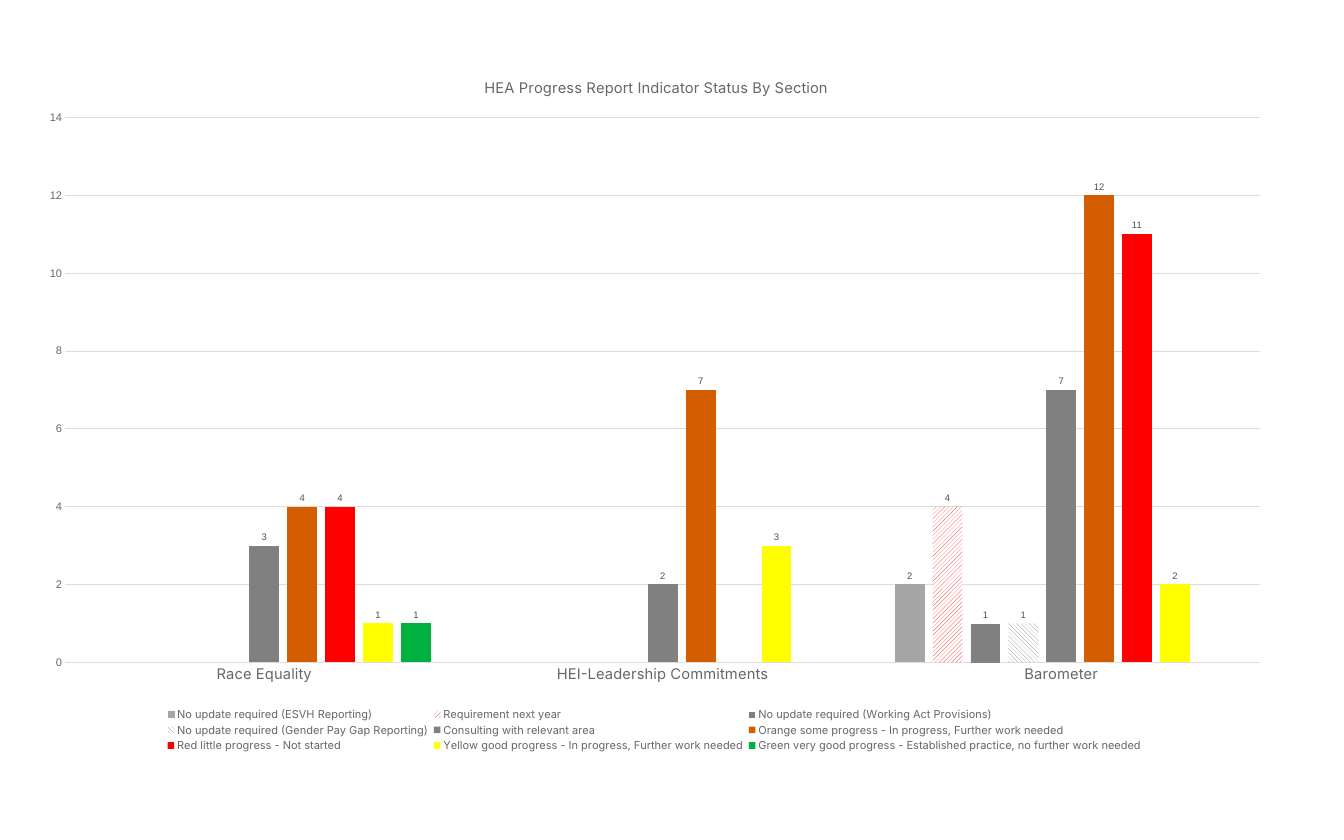
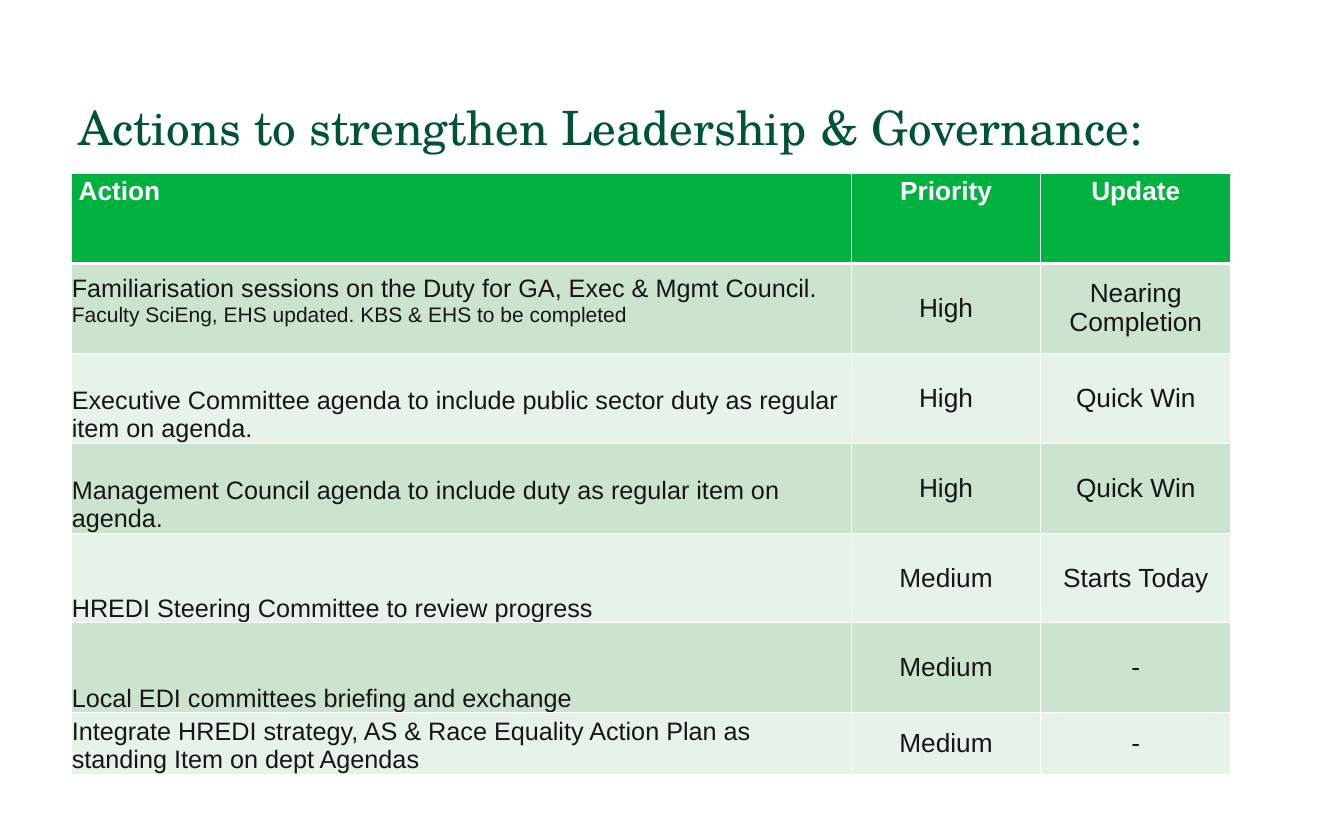
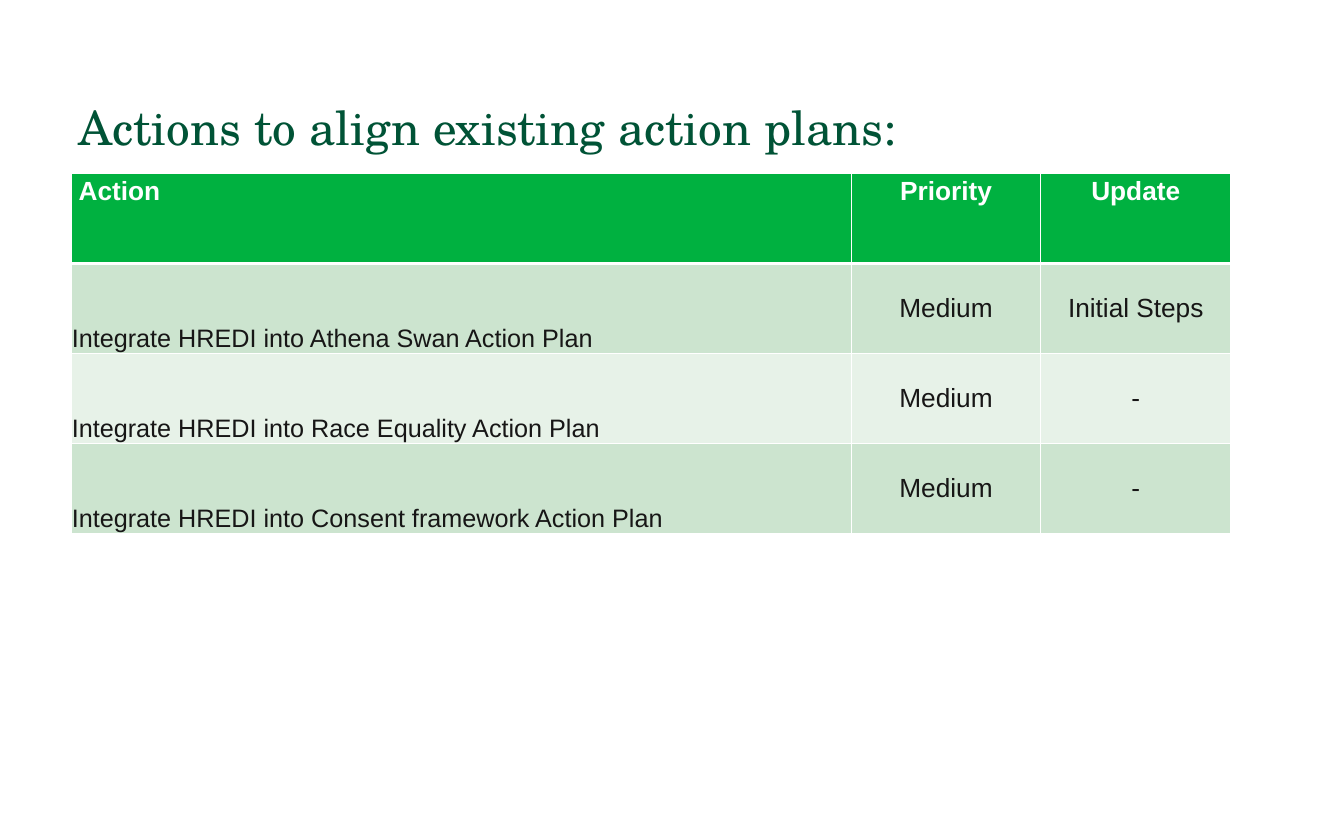
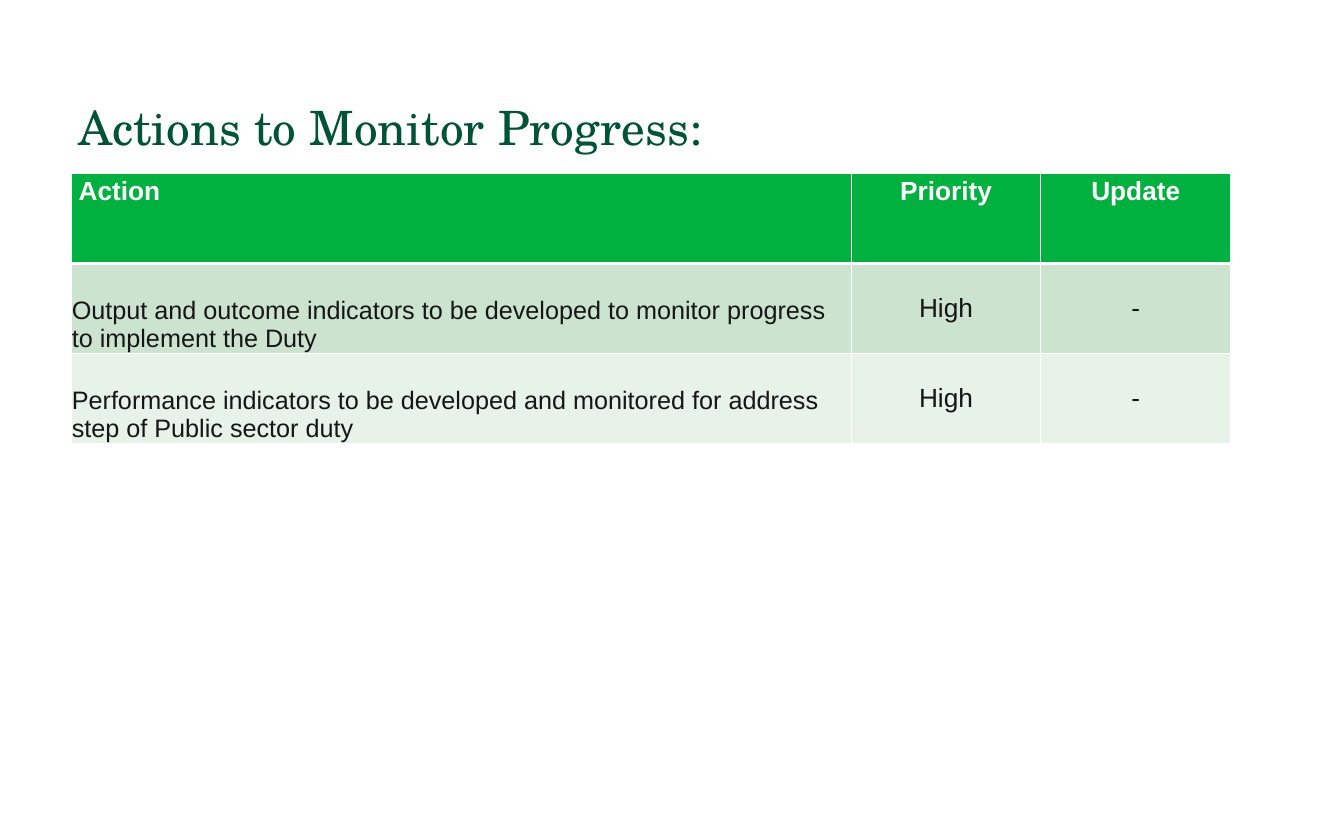
from lxml.etree import SubElement
from pptx import Presentation
from pptx.chart.data import CategoryChartData
from pptx.dml.color import RGBColor
from pptx.enum.chart import XL_CHART_TYPE, XL_LABEL_POSITION, XL_LEGEND_POSITION, XL_TICK_MARK
from pptx.enum.dml import MSO_PATTERN
from pptx.enum.text import MSO_ANCHOR, PP_ALIGN
from pptx.oxml import parse_xml
from pptx.oxml.ns import nsdecls, qn
from pptx.util import Inches, Pt

WIDTH, HEIGHT = 17.78, 11.11
LEFT = 0.94
COLUMNS = (10.32, 2.51, 2.51)
ROW, SHORT_ROW = 1.19, 0.75
TABLE_TOP = 2.29
SERIF, SANS, CHART_SANS = "TeX Gyre Schola", "Arial", "Inter"

COLORS = {
    "title": "005336", "header": "00B140", "band_dark": "CCE4CF", "band_light": "E7F2E8",
    "text": "171616", "white": "FFFFFF", "axis_text": "6A6666", "label": "524F4F",
    "grid": "DDDBDB", "silver": "A6A6A6", "gray": "808080", "orange": "D45D00",
    "red": "FF0000", "yellow": "FFFF00", "green": "00B140",
}

SECTIONS = ("Race Equality", "HEI-Leadership Commitments", "Barometer")
# name, values, colour, pattern
STATUSES = (
    ("No update required (ESVH Reporting)", (None, None, 2), "silver", MSO_PATTERN.DARK_VERTICAL),
    ("Requirement next year", (None, None, 4), "red", MSO_PATTERN.WIDE_UPWARD_DIAGONAL),
    ("No update required (Working Act Provisions)", (None, None, 1), "gray",
     MSO_PATTERN.DARK_HORIZONTAL),
    ("No update required (Gender Pay Gap Reporting)", (None, None, 1), "gray",
     MSO_PATTERN.WIDE_DOWNWARD_DIAGONAL),
    ("Consulting with relevant area", (3, 2, 7), "gray", None),
    ("Orange some progress - In progress, Further work needed", (4, 7, 12), "orange", None),
    ("Red little progress - Not started", (4, None, 11), "red", None),
    ("Yellow good progress - In progress, Further work needed", (1, 3, 2), "yellow", None),
    ("Green very good progress - Established practice, no further work needed",
     (1, None, None), "green", None),
)

HEADINGS = ("Action", "Priority", "Update")
# title, then rows of (action, priority, update, optional detail)
ACTION_PLANS = (
    ("Actions to strengthen Leadership & Governance:", (
        ("Familiarisation sessions on the Duty for GA, Exec & Mgmt Council.", "High",
         "Nearing Completion", "Faculty SciEng, EHS updated. KBS & EHS to be completed"),
        ("Executive Committee agenda to include public sector duty as regular item on agenda.",
         "High", "Quick Win"),
        ("Management Council agenda to include duty as regular item on agenda.",
         "High", "Quick Win"),
        ("HREDI Steering Committee to review progress", "Medium", "Starts Today"),
        ("Local EDI committees briefing and exchange", "Medium", "-"),
        ("Integrate HREDI strategy, AS & Race Equality Action Plan as standing Item on dept "
         "Agendas", "Medium", "-"),
    )),
    ("Actions to align existing action plans:", (
        ("Integrate HREDI into Athena Swan Action Plan", "Medium", "Initial Steps"),
        ("Integrate HREDI into Race Equality Action Plan", "Medium", "-"),
        ("Integrate HREDI into Consent framework Action Plan", "Medium", "-"),
    )),
    ("Actions to Monitor Progress:", (
        ("Output and outcome indicators to be developed to monitor progress to implement the "
         "Duty", "High", "-"),
        ("Performance indicators to be developed and monitored for address step of Public "
         "sector duty", "High", "-"),
    )),
)


def rgb(color):
    return RGBColor.from_string(COLORS[color])


def style_font(font, size, color, name=SANS, bold=False):
    font.size, font.name, font.bold = Pt(size), name, bold
    font.color.rgb = rgb(color)


def add_run(paragraph, text, size, color, name=SANS, bold=False):
    run = paragraph.add_run()
    run.text = text
    style_font(run.font, size, color, name, bold)


def add_title(slide, text):
    box = slide.shapes.add_textbox(Inches(LEFT), Inches(1.34), Inches(15.33), Inches(1.14))
    box.text_frame.word_wrap = True
    paragraph = box.text_frame.paragraphs[0]
    paragraph.line_spacing = 0.9
    add_run(paragraph, text, 45, "title", SERIF)


def set_borders(cell, bottom_width):
    properties = cell._tc.get_or_add_tcPr()
    for index, (side, width) in enumerate((("L", 1), ("R", 1), ("T", 1), ("B", bottom_width))):
        properties.insert(index, parse_xml(
            f'<a:ln{side} {nsdecls("a")} w="{Pt(width)}"><a:solidFill>'
            f'<a:srgbClr val="{COLORS["white"]}"/></a:solidFill></a:ln{side}>'))


def fill_cell(cell, color, bottom_border=1):
    cell.fill.solid()
    cell.fill.fore_color.rgb = rgb(color)
    set_borders(cell, bottom_border)


def write_header(cell, text, centred):
    paragraph = cell.text_frame.paragraphs[0]
    if centred:
        paragraph.alignment = PP_ALIGN.CENTER
    add_run(paragraph, text, 25, "white", bold=True)
    fill_cell(cell, "header", bottom_border=3)


def write_action(cell, action, detail, band):
    cell.vertical_anchor = MSO_ANCHOR.BOTTOM
    cell.margin_left = cell.margin_right = cell.margin_top = Inches(0.01)
    cell.margin_bottom = Inches(0.35 if detail else 0)
    add_run(cell.text_frame.paragraphs[0], action, 24, "text")
    for line in detail:
        add_run(cell.text_frame.add_paragraph(), line, 20, "text")
    fill_cell(cell, band)


def write_status(cell, status, band):
    cell.vertical_anchor = MSO_ANCHOR.MIDDLE
    paragraph = cell.text_frame.paragraphs[0]
    paragraph.alignment = PP_ALIGN.CENTER
    add_run(paragraph, status, 25, "text")
    fill_cell(cell, band)


def add_action_table(slide, actions):
    count = len(actions) + 1
    table = slide.shapes.add_table(count, len(COLUMNS), Inches(LEFT), Inches(TABLE_TOP),
                                   Inches(sum(COLUMNS)), Inches(ROW * count)).table
    table.horz_banding = False
    for column, width in zip(table.columns, COLUMNS):
        column.width = Inches(width)
    for index, row in enumerate(table.rows):
        row.height = Inches(SHORT_ROW if index == 6 else ROW)
    for index, heading in enumerate(HEADINGS):
        write_header(table.cell(0, index), heading, centred=index > 0)
    for index, (action, priority, update, *detail) in enumerate(actions, start=1):
        band = "band_dark" if index % 2 else "band_light"
        write_action(table.cell(index, 0), action, detail, band)
        write_status(table.cell(index, 1), priority, band)
        write_status(table.cell(index, 2), update, band)


def place_part(element, index, x, y, w=None, h=None, inner=False):
    """Fix a chart part's place, in shares of the chart's size."""
    for old in element.findall(qn("c:layout")):
        element.remove(old)
    layout = parse_xml(f'<c:layout {nsdecls("c")}><c:manualLayout/></c:layout>')
    settings = [("layoutTarget", "inner")] if inner else []
    settings += [("xMode", "edge"), ("yMode", "edge"), ("x", x), ("y", y)]
    if w is not None:
        settings += [("w", w), ("h", h)]
    for tag, value in settings:
        SubElement(layout[0], qn(f"c:{tag}")).set("val", str(value))
    element.insert(index, layout)


def style_series(series, color, pattern):
    fill = series.format.fill
    if pattern is None:
        fill.solid()
    else:
        fill.patterned()
        fill.pattern = pattern
        fill.back_color.rgb = rgb("white")
    fill.fore_color.rgb = rgb(color)
    labels = series.data_labels
    labels.show_value = True
    labels.position = XL_LABEL_POSITION.OUTSIDE_END
    style_font(labels.font, 9, "label")


def style_line(line):
    line.color.rgb = rgb("grid")
    line.width = Pt(0.75)


def style_axes(chart):
    sections, counts = chart.category_axis, chart.value_axis
    for axis in (sections, counts):
        axis.major_tick_mark = axis.minor_tick_mark = XL_TICK_MARK.NONE
    style_font(sections.tick_labels.font, 14, "axis_text", CHART_SANS)
    style_line(sections.format.line)
    style_font(counts.tick_labels.font, 10.5, "axis_text")
    counts.minimum_scale, counts.maximum_scale, counts.major_unit = 0, 14, 2
    counts.format.line.fill.background()
    style_line(counts.major_gridlines.format.line)


def add_status_chart(slide, title):
    data = CategoryChartData(number_format="General")
    data.categories = SECTIONS
    for name, values, *_ in STATUSES:
        data.add_series(name, values)
    chart = slide.shapes.add_chart(XL_CHART_TYPE.COLUMN_CLUSTERED, Inches(0.31), Inches(0.68),
                                   Inches(16.7), Inches(9.3), data).chart
    style_font(chart.font, 10, "text")
    plot = chart.plots[0]
    plot.gap_width, plot.overlap, plot.vary_by_categories = 219, -27, False
    for series, (_, _, color, pattern) in zip(plot.series, STATUSES):
        style_series(series, color, pattern)
    style_axes(chart)

    chart.has_title = True
    add_run(chart.chart_title.text_frame.paragraphs[0], title, 14, "axis_text", CHART_SANS)
    chart.has_legend = True
    chart.legend.position = XL_LEGEND_POSITION.BOTTOM
    chart.legend.include_in_layout = False
    style_font(chart.legend.font, 10.5, "axis_text", CHART_SANS)

    parts = chart._chartSpace.chart
    place_part(parts.find(qn("c:title")), 1, 0.363, 0.034)
    place_part(parts.plotArea, 0, 0.033, 0.094, 0.947, 0.775, inner=True)
    place_part(parts.find(qn("c:legend")), 1, 0.11, 0.93, 0.78, 0.07)


def main():
    deck = Presentation()
    deck.slide_width, deck.slide_height = Inches(WIDTH), Inches(HEIGHT)
    blank = deck.slide_layouts[6]
    add_status_chart(deck.slides.add_slide(blank),
                     "HEA Progress Report Indicator Status By Section")
    for title, actions in ACTION_PLANS:
        slide = deck.slides.add_slide(blank)
        add_title(slide, title)
        add_action_table(slide, actions)
    deck.save("out.pptx")


if __name__ == "__main__":
    main()
